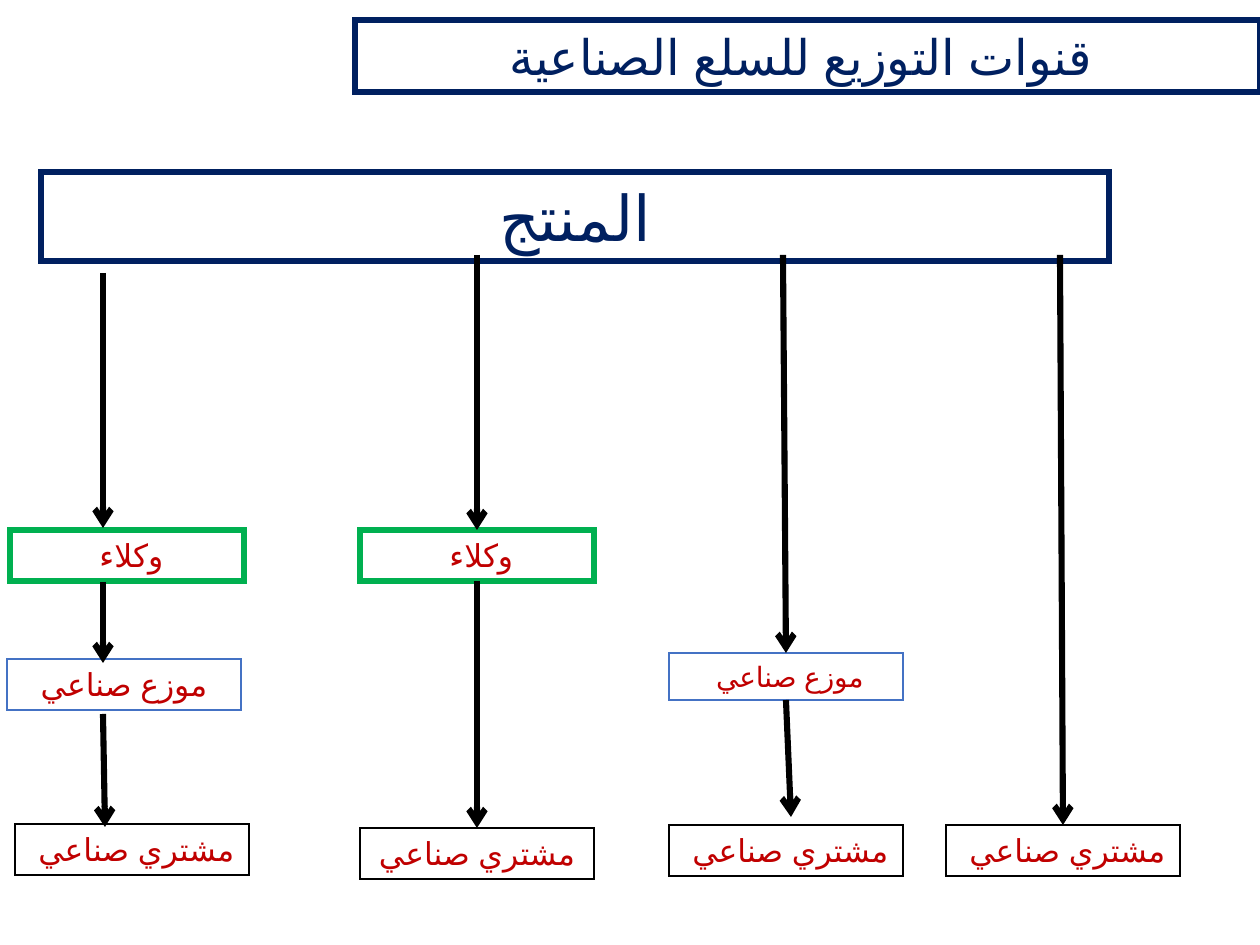
from lxml.etree import SubElement
from pptx import Presentation
from pptx.dml.color import RGBColor
from pptx.enum.lang import MSO_LANGUAGE_ID
from pptx.enum.shapes import MSO_CONNECTOR
from pptx.enum.text import MSO_ANCHOR, MSO_AUTO_SIZE, PP_ALIGN
from pptx.oxml.ns import qn
from pptx.util import Pt

NAVY, GREEN, BLUE, BLACK, RED, WHITE = "002060", "00B050", "4472C4", "000000", "C00000", "FFFFFF"
FONT = "Arial"
THICK, THIN = 3.5, 1
BOX_WIDTH = 234

TITLE = ("قنوات التوزيع للسلع الصناعية ", 355, 20, 905, 72, 28)
PRODUCER = ("المنتج", 41, 172, 1068, 89, 36)

STYLES = {
    "agent": (GREEN, THICK, None),
    "distributor": (BLUE, THIN, WHITE),
    "buyer": (BLACK, THIN, WHITE),
}

STAGES = [
    ("buyer", " مشتري صناعي", 946, 825, 51, 18),
    ("distributor", " موزع صناعي", 669, 653, 47, 16),
    ("buyer", " مشتري صناعي", 669, 825, 51, 18),
    ("agent", " وكلاء", 360, 530, 51, 18),
    ("buyer", "مشتري صناعي", 360, 828, 51, 18),
    ("agent", " وكلاء", 10, 530, 51, 18),
    ("distributor", "موزع صناعي", 7, 659, 51, 18),
    ("buyer", " مشتري صناعي", 15, 824, 51, 18),
]

ARROWS = [
    (1060, 255, 1063, 825),
    (783, 255, 786, 653),
    (786, 700, 791, 817),
    (477, 255, 477, 530),
    (477, 581, 477, 828),
    (103, 273, 103, 528),
    (103, 582, 103, 663),
    (103, 714, 105, 827),
]


def px(value):
    return round(value * 914400 / 126)


def color(value):
    return RGBColor.from_string(value)


def format_box(box, text, size, ink, border, weight, fill=None):
    box.line.color.rgb = color(border)
    box.line.width = Pt(weight)
    SubElement(box.line._get_or_add_ln(), qn("a:miter"), lim="800000")
    if fill:
        box.fill.solid()
        box.fill.fore_color.rgb = color(fill)
    frame = box.text_frame
    frame.word_wrap = True
    frame.auto_size = MSO_AUTO_SIZE.NONE
    frame.vertical_anchor = MSO_ANCHOR.TOP
    para = frame.paragraphs[0]
    para.alignment = PP_ALIGN.CENTER
    span = para.add_run()
    span.text = text
    span.font.size = Pt(size)
    span.font.name = FONT
    span.font.language_id = MSO_LANGUAGE_ID.ARABIC
    span.font.color.rgb = color(ink)
    SubElement(span.font._element, qn("a:cs"), typeface=FONT)


def add_box(page, left, top, width, height):
    return page.shapes.add_textbox(px(left), px(top), px(width), px(height))


def add_arrow(page, points):
    arrow = page.shapes.add_connector(MSO_CONNECTOR.STRAIGHT, *map(px, points))
    arrow.line.color.rgb = color(BLACK)
    arrow.line.width = Pt(THICK)
    SubElement(arrow.line._get_or_add_ln(), qn("a:tailEnd"), type="arrow")
    SubElement(arrow._element.spPr, qn("a:effectLst"))


def main():
    deck = Presentation()
    deck.slide_width, deck.slide_height = px(1260), px(945)
    page = deck.slides.add_slide(deck.slide_layouts[5])

    text, *frame, size = TITLE
    title = page.shapes.title
    title.left, title.top, title.width, title.height = map(px, frame)
    format_box(title, text, size, NAVY, NAVY, THICK)

    text, *frame, size = PRODUCER
    format_box(add_box(page, *frame), text, size, NAVY, NAVY, THICK)

    for kind, text, left, top, height, size in STAGES:
        box = add_box(page, left, top, BOX_WIDTH, height)
        format_box(box, text, size, RED, *STYLES[kind])

    for points in ARROWS:
        add_arrow(page, points)

    deck.save("out.pptx")


if __name__ == "__main__":
    main()
